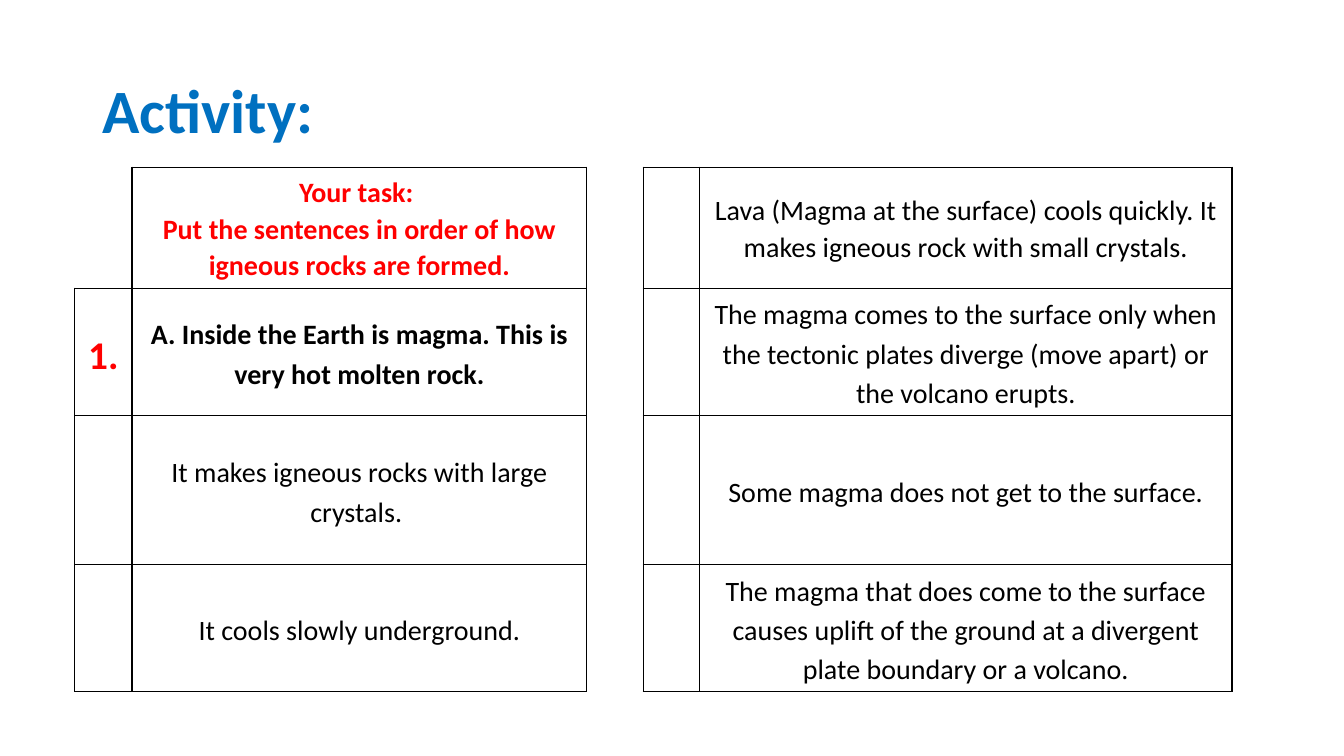
from lxml.etree import SubElement
from pptx import Presentation
from pptx.dml.color import RGBColor
from pptx.enum.text import MSO_ANCHOR, PP_ALIGN
from pptx.oxml.ns import qn
from pptx.util import Inches, Pt

COLORS = {"title": "0070C0", "task": "FF0000", "text": "000000", "line": "000000"}
COLS = [0.57, 4.51, 0.56, 0.56, 5.28]
ROWS = [1.2, 1.26, 1.48, 1.26]
GAP = 2  # empty column between the two halves

TASK = ["Your task: ", "Put the sentences in order of how igneous rocks are formed."]
LEFT = [
    "A. Inside the Earth is magma. This is very hot molten rock.",
    "It makes igneous rocks with large crystals. ",
    "It cools slowly underground.",
]
RIGHT = [
    "Lava (Magma at the surface) cools quickly. It makes igneous rock with small crystals.",
    "The magma comes to the surface only when the tectonic plates diverge "
    "(move apart) or the volcano erupts.",
    "Some magma does not get to the surface.",
    "The magma that does come to the surface causes uplift of the ground "
    "at a divergent plate boundary or a volcano.",
]


def write(frame, lines, size=20, color="text", bold=False,
          align=PP_ALIGN.CENTER, space=1.15):
    """Fill a text frame, one paragraph for each line."""
    for i, line in enumerate(lines):
        para = frame.paragraphs[0] if i == 0 else frame.add_paragraph()
        para.alignment = align
        para.line_spacing = space
        run = para.add_run()
        run.text = line
        run.font.name = "Calibri"
        run.font.size = Pt(size)
        run.font.bold = bold
        run.font.color.rgb = RGBColor.from_string(COLORS[color])


def border(cell, sides):
    """Draw the named sides of a cell and clear the others."""
    props = cell._tc.get_or_add_tcPr()
    for i, side in enumerate("LRTB"):
        line = SubElement(props, qn(f"a:ln{side}"), w=str(Pt(1)))
        if side in sides:
            fill = SubElement(line, qn("a:solidFill"))
            SubElement(fill, qn("a:srgbClr"), val=COLORS["line"])
        else:
            SubElement(line, qn("a:noFill"))
        props.insert(i, line)  # lines come before the fill


def edges(row, col):
    if (row, col) == (0, 0):
        return "RB"
    return "LR" if col == GAP else "LRTB"


def add_title(slide):
    box = slide.shapes.add_textbox(Inches(0.92), Inches(0.4), Inches(11.5), Inches(1.45))
    frame = box.text_frame
    frame.word_wrap = True
    frame.vertical_anchor = MSO_ANCHOR.MIDDLE
    write(frame, ["Activity:"], size=44, color="title", bold=True,
          align=PP_ALIGN.LEFT, space=0.9)


def add_grid(slide):
    frame = slide.shapes.add_table(
        len(ROWS), len(COLS), Inches(0.74), Inches(1.66),
        Inches(sum(COLS)), Inches(sum(ROWS)))
    table = frame.table
    table.first_row = table.horz_banding = False
    for col, width in zip(table.columns, COLS):
        col.width = Inches(width)
    for r, height in enumerate(ROWS):
        table.rows[r].height = Inches(height)
        for c in range(len(COLS)):
            cell = table.cell(r, c)
            cell.fill.background()
            cell.vertical_anchor = MSO_ANCHOR.MIDDLE
            cell.margin_left = cell.margin_right = Inches(0.03)
            cell.margin_top, cell.margin_bottom = Inches(0.01), 0
            border(cell, edges(r, c))
    return table


def main():
    deck = Presentation()
    deck.slide_width, deck.slide_height = Inches(13.33), Inches(7.5)
    slide = deck.slides.add_slide(deck.slide_layouts[6])
    add_title(slide)
    table = add_grid(slide)

    # Task and first answer
    write(table.cell(0, 1).text_frame, TASK, color="task", bold=True, space=1.07)
    write(table.cell(1, 0).text_frame, ["1."], size=28, color="task", bold=True)

    # Sentences to put in order
    for r, text in enumerate(LEFT, 1):
        write(table.cell(r, 1).text_frame, [text], bold=r == 1)
    for r, text in enumerate(RIGHT):
        write(table.cell(r, 4).text_frame, [text], space=1.15 if r else 1.07)

    deck.save("out.pptx")


if __name__ == "__main__":
    main()
